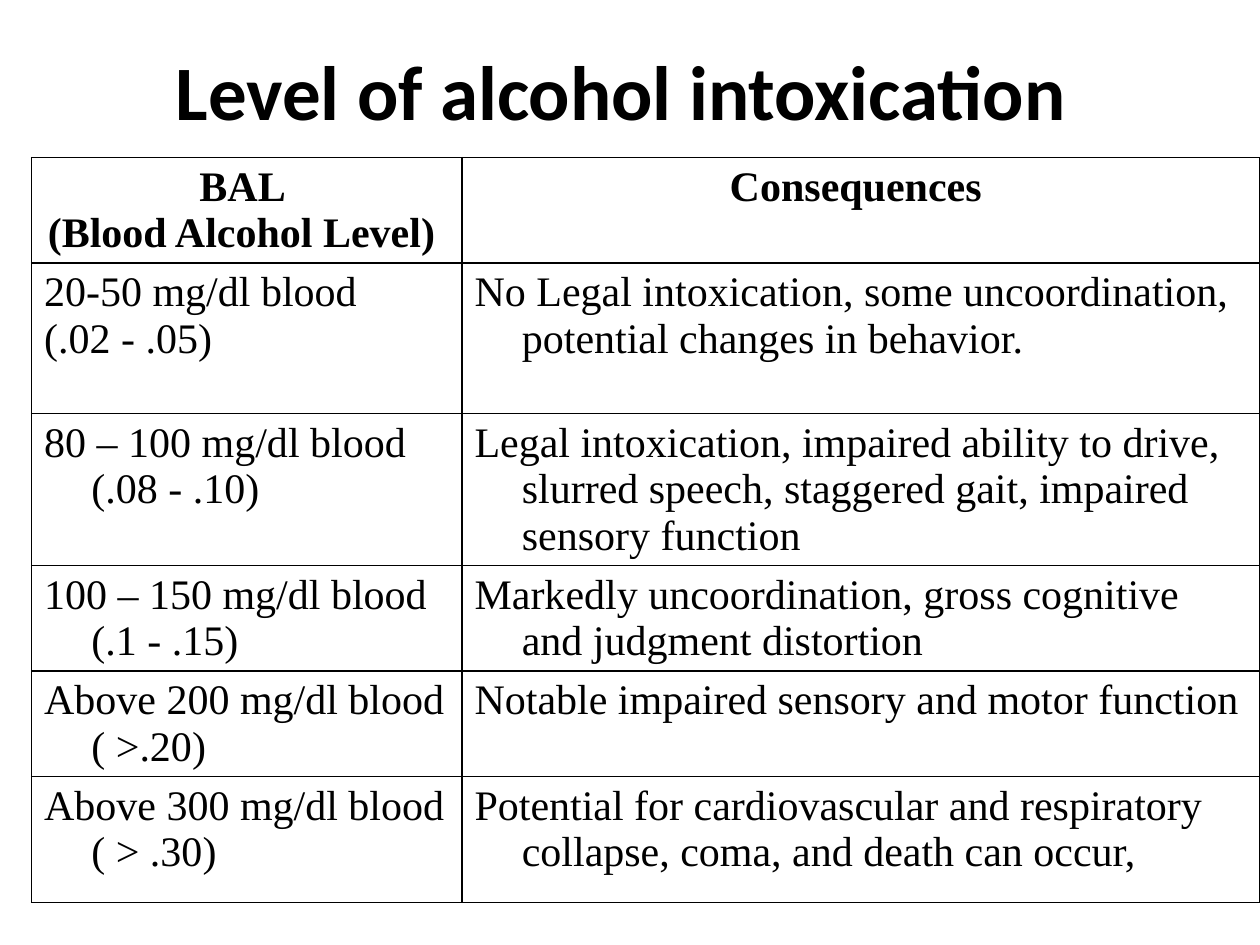
from lxml import etree
from pptx import Presentation
from pptx.dml.color import RGBColor
from pptx.enum.text import MSO_ANCHOR, PP_ALIGN
from pptx.oxml.ns import qn
from pptx.util import Pt

LEFT, CENTER = PP_ALIGN.LEFT, PP_ALIGN.CENTER
TOP, MIDDLE = MSO_ANCHOR.TOP, MSO_ANCHOR.MIDDLE
COLORS = {"ink": "000000", "rule": "000000"}
INDENT = Pt(27)
WIDTHS = [246, 456]
HEIGHTS = [38, 86, 86, 59, 59, 72]
ROWS = [
    ("BAL \n(Blood Alcohol Level) ", "Consequences "),
    ("20-50 mg/dl blood\n(.02 - .05)",
     "No Legal intoxication, some uncoordination, potential changes in behavior."),
    ("80 – 100 mg/dl blood (.08 - .10)",
     "Legal intoxication, impaired ability to drive, slurred speech, "
     "staggered gait, impaired sensory function"),
    ("100 – 150 mg/dl blood (.1 - .15)",
     "Markedly uncoordination, gross cognitive and judgment distortion"),
    ("Above 200 mg/dl blood ( >.20)",
     "Notable impaired sensory and motor function"),
    ("Above 300 mg/dl blood ( > .30)",
     "Potential for cardiovascular and respiratory collapse, coma, "
     "and death can occur,"),
]


def style(frame, face, size, bold, align):
    """Format every paragraph and run of a text frame."""
    for para in frame.paragraphs:
        para.alignment = align
        for run in para.runs:
            font = run.font
            font.name, font.size, font.bold = face, Pt(size), bold
            font.color.rgb = RGBColor.from_string(COLORS["ink"])


def hang(frame):
    """Give every paragraph a hanging indent."""
    for para in frame.paragraphs:
        props = para._p.get_or_add_pPr()
        props.set("marL", str(INDENT))
        props.set("indent", str(-INDENT))


def border(cell):
    """Draw a thin line on all four sides of a cell."""
    props = cell._tc.get_or_add_tcPr()
    for spot, side in enumerate(("lnL", "lnR", "lnT", "lnB")):
        line = etree.Element(qn(f"a:{side}"), w=str(Pt(1)))
        fill = etree.SubElement(line, qn("a:solidFill"))
        etree.SubElement(fill, qn("a:srgbClr"), val=COLORS["rule"])
        props.insert(spot, line)


def add_title(slide, text):
    """Place and format the slide title."""
    title = slide.shapes.title
    title.left, title.top = Pt(54), Pt(18)
    title.width, title.height = Pt(612), Pt(66)
    frame = title.text_frame
    frame.text = text
    frame.word_wrap = True
    frame.vertical_anchor = MIDDLE
    style(frame, "Calibri", 44, True, CENTER)


def add_grid(slide):
    """Add the table of blood levels and consequences."""
    table = slide.shapes.add_table(
        len(ROWS), len(WIDTHS), Pt(18), Pt(90),
        Pt(sum(WIDTHS)), Pt(sum(HEIGHTS))).table
    table.first_row = table.horz_banding = False
    for col, width in zip(table.columns, WIDTHS):
        col.width = Pt(width)
    for row, height in zip(table.rows, HEIGHTS):
        row.height = Pt(height)
    for r, texts in enumerate(ROWS):
        head = r == 0
        for c, text in enumerate(texts):
            cell = table.cell(r, c)
            cell.fill.background()
            cell.vertical_anchor = TOP
            border(cell)
            frame = cell.text_frame
            frame.text = text
            style(frame, "Times New Roman", 24, head, CENTER if head else LEFT)
            hang(frame)


def main():
    """Build and save the slide."""
    deck = Presentation()
    deck.slide_width, deck.slide_height = Pt(720), Pt(540)
    slide = deck.slides.add_slide(deck.slide_layouts[5])
    add_title(slide, "Level of alcohol intoxication ")
    add_grid(slide)
    deck.save("out.pptx")


if __name__ == "__main__":
    main()
